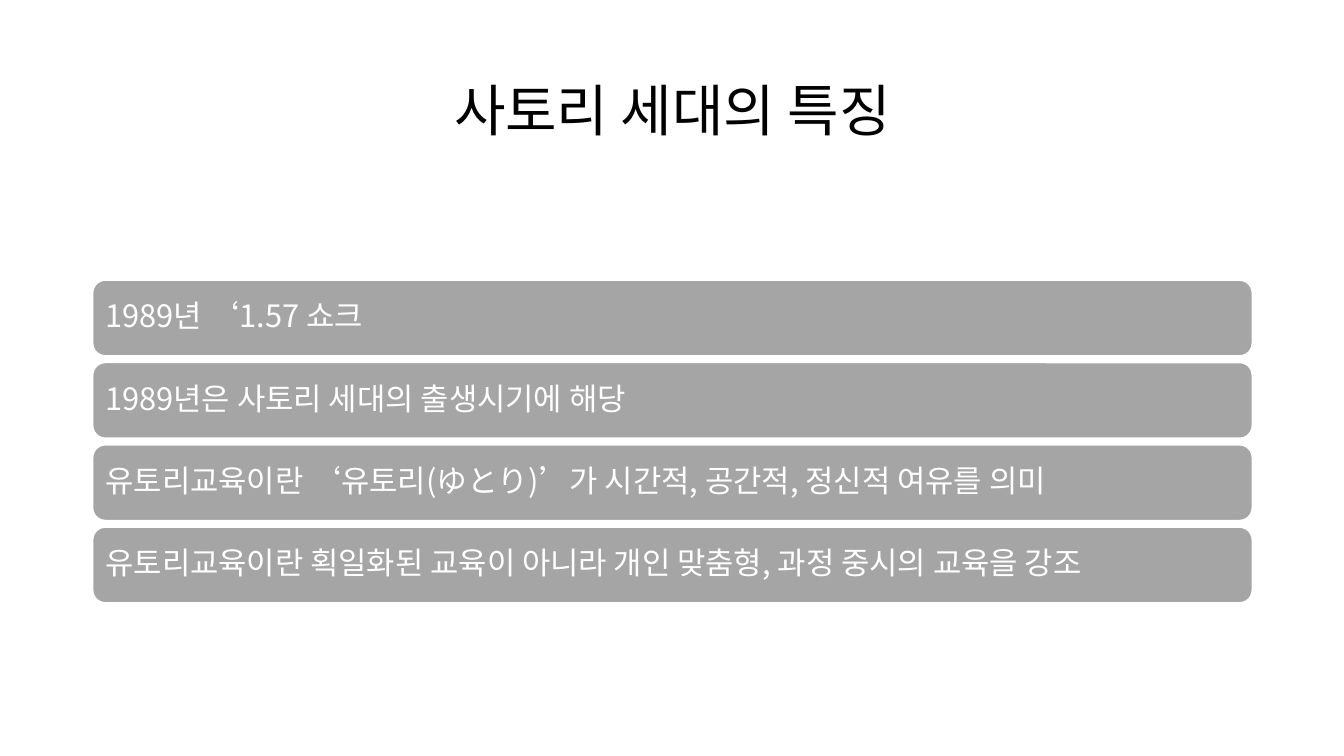
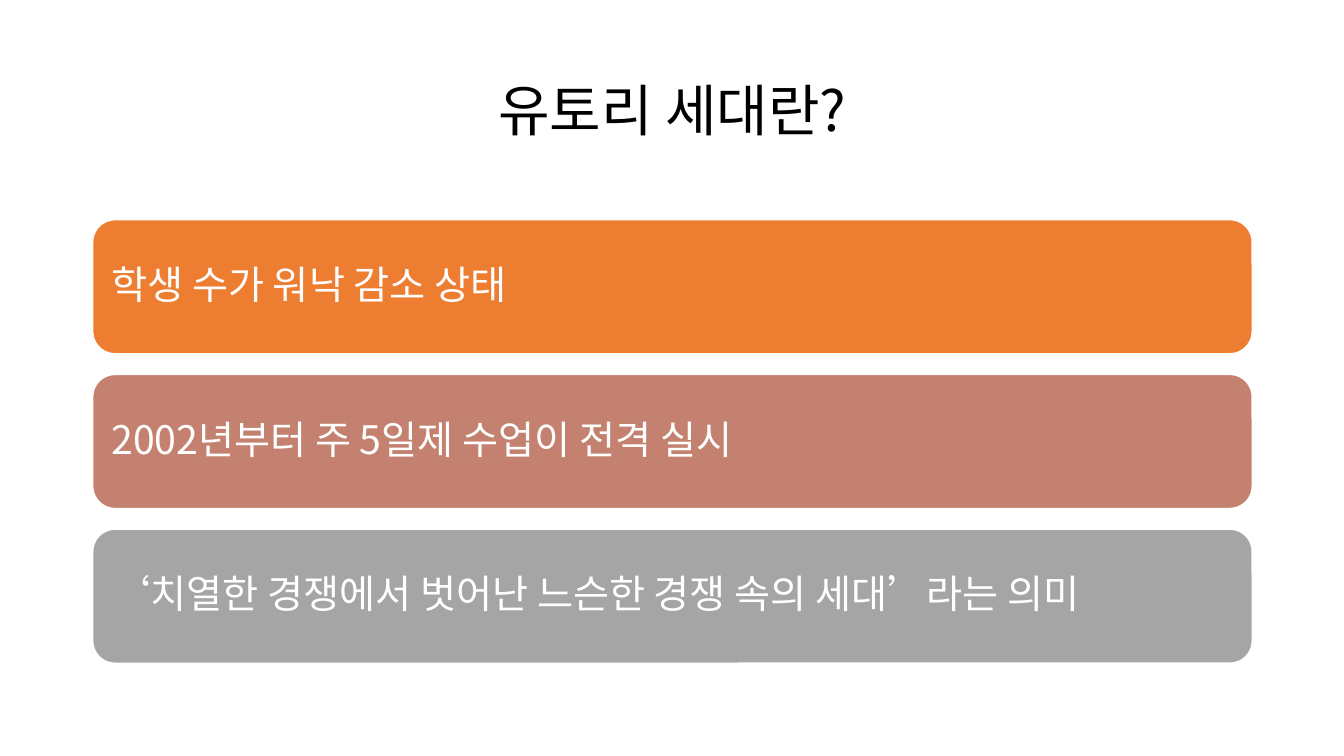
from dataclasses import dataclass

from pptx import Presentation
from pptx.dml.color import RGBColor
from pptx.enum.shapes import MSO_SHAPE
from pptx.enum.text import MSO_ANCHOR, MSO_AUTO_SIZE, PP_ALIGN
from pptx.oxml.ns import qn
from pptx.slide import Slide
from pptx.text.text import TextFrame
from pptx.util import Inches, Pt

BLACK = RGBColor(0x00, 0x00, 0x00)
WHITE = RGBColor(0xFF, 0xFF, 0xFF)
GRAY = RGBColor(0xA5, 0xA5, 0xA5)
ORANGE = RGBColor(0xED, 0x7D, 0x31)
ROSE = RGBColor(0xC4, 0x81, 0x70)

FONT_NAME = "Noto Sans CJK KR"
TITLE_ONLY = 5
CONTENT_LEFT, CONTENT_WIDTH = 0.92, 11.5
STACK_CENTER = 4.38


@dataclass(frozen=True)
class Bar:
    text: str
    color: RGBColor = GRAY


@dataclass(frozen=True)
class BarStack:
    title: str
    bars: tuple[Bar, ...]
    total_height: float
    bar_height: float
    inset: float
    font_size: int


STACKS = (
    BarStack(
        "사토리 세대의 특징",
        (
            Bar("1989년 ‘1.57 쇼크"),
            Bar("1989년은 사토리 세대의 출생시기에 해당"),
            Bar("유토리교육이란 ‘유토리(ゆとり)’가 시간적, 공간적, 정신적 여유를 의미"),
            Bar("유토리교육이란 획일화된 교육이 아니라 개인 맞춤형, 과정 중시의 교육을 강조"),
        ),
        total_height=3.2, bar_height=0.75, inset=0.09, font_size=22,
    ),
    BarStack(
        "유토리 세대란?",
        (
            Bar("학생 수가 워낙 감소 상태", ORANGE),
            Bar("2002년부터 주 5일제 수업이 전격 실시", ROSE),
            Bar("‘치열한 경쟁에서 벗어난 느슨한 경쟁 속의 세대’라는 의미"),
        ),
        total_height=4.4, bar_height=1.33, inset=0.12, font_size=28,
    ),
)


def write_line(frame: TextFrame, text: str, size: int, color: RGBColor,
               alignment: PP_ALIGN) -> None:
    frame.word_wrap = True
    frame.auto_size = MSO_AUTO_SIZE.NONE
    frame.vertical_anchor = MSO_ANCHOR.MIDDLE
    paragraph = frame.paragraphs[0]
    paragraph.alignment = alignment
    paragraph.line_spacing = 0.9
    run = paragraph.add_run()
    run.text = text
    run.font.size = Pt(size)
    run.font.name = FONT_NAME
    run.font.color.rgb = color
    east_asian = run.font._element.makeelement(qn("a:ea"), {"typeface": FONT_NAME})
    run.font._element.find(qn("a:latin")).addnext(east_asian)


def add_title(slide: Slide, text: str) -> None:
    title = slide.shapes.title
    title.left, title.top = Inches(CONTENT_LEFT), Inches(0.4)
    title.width, title.height = Inches(CONTENT_WIDTH), Inches(1.45)
    write_line(title.text_frame, text, 40, BLACK, PP_ALIGN.CENTER)


def add_bar(slide: Slide, bar: Bar, top: float, stack: BarStack) -> None:
    shape = slide.shapes.add_shape(
        MSO_SHAPE.ROUNDED_RECTANGLE, Inches(CONTENT_LEFT), Inches(top),
        Inches(CONTENT_WIDTH), Inches(stack.bar_height))
    shape.shadow.inherit = False
    shape.fill.solid()
    shape.fill.fore_color.rgb = bar.color
    shape.line.color.rgb = WHITE
    shape.line.width = Pt(1)
    frame = shape.text_frame
    frame.margin_left = frame.margin_right = Inches(stack.inset)
    frame.margin_top = frame.margin_bottom = Inches(stack.inset)
    write_line(frame, bar.text, stack.font_size, WHITE, PP_ALIGN.LEFT)


def add_stack(slide: Slide, stack: BarStack) -> None:
    """Spread the bars evenly over the stack's height, around the shared centre."""
    first_top = STACK_CENTER - stack.total_height / 2
    step = (stack.total_height - stack.bar_height) / (len(stack.bars) - 1)
    for index, bar in enumerate(stack.bars):
        add_bar(slide, bar, first_top + index * step, stack)


def main() -> None:
    presentation = Presentation()
    presentation.slide_width = Inches(13.33)
    presentation.slide_height = Inches(7.5)
    for stack in STACKS:
        slide = presentation.slides.add_slide(presentation.slide_layouts[TITLE_ONLY])
        add_title(slide, stack.title)
        add_stack(slide, stack)
    presentation.save("out.pptx")


if __name__ == "__main__":
    main()
